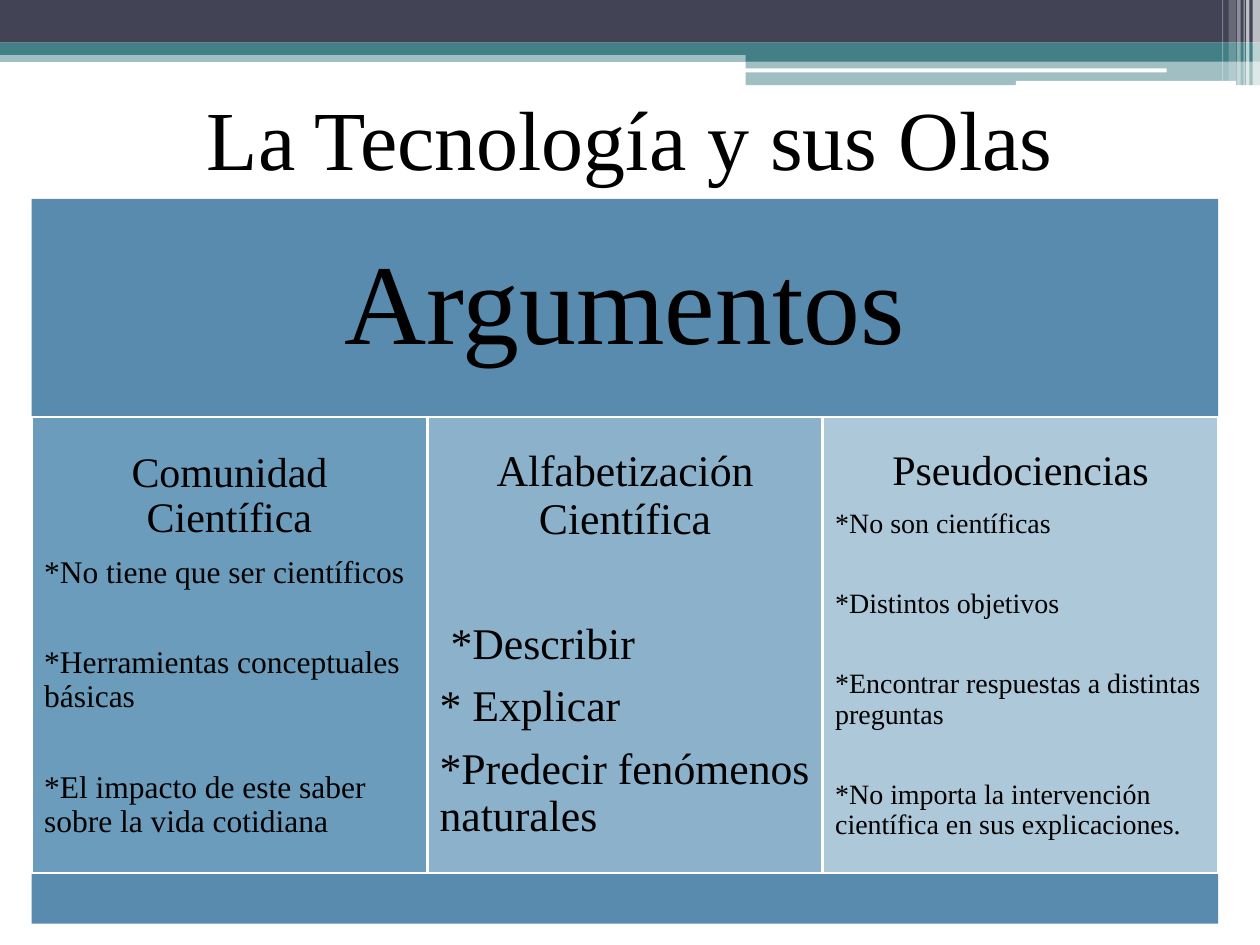
from lxml.etree import SubElement
from pptx import Presentation
from pptx.dml.color import RGBColor
from pptx.enum.shapes import MSO_SHAPE
from pptx.enum.text import MSO_ANCHOR, PP_ALIGN
from pptx.oxml.ns import qn
from pptx.util import Cm, Pt

WHITE = RGBColor(0xFF, 0xFF, 0xFF)
BLACK = RGBColor(0, 0, 0)
NAVY = RGBColor(0x42, 0x44, 0x56)
TEAL = RGBColor(0x43, 0x80, 0x86)
BLUE = RGBColor(0x58, 0x8B, 0xAD)
COLUMN_BLUE = RGBColor(0x5C, 0x92, 0xB5)
FONT = "Times New Roman"


def add_block(left, top, width, height, color, alpha=100, kind=MSO_SHAPE.RECTANGLE):
    block = slide.shapes.add_shape(kind, Cm(left), Cm(top), Cm(width), Cm(height))
    block.shadow.inherit = False
    block.fill.solid()
    block.fill.fore_color.rgb = color
    block.line.fill.background()
    if alpha < 100:
        srgb = block._element.spPr.find(qn("a:solidFill")).find(qn("a:srgbClr"))
        SubElement(srgb, qn("a:alpha")).set("val", str(alpha * 1000))
    return block


def write(paragraph, text, size, align, gap=0.0):
    paragraph.text = text
    values = {"alignment": align, "line_spacing": 0.9,
              "space_before": Pt(0), "space_after": Pt(gap)}
    for name, value in values.items():
        setattr(paragraph, name, value)
    for name, value in {"name": FONT, "size": Pt(size)}.items():
        setattr(paragraph.font, name, value)
    paragraph.font.color.rgb = BLACK


deck = Presentation()
deck.slide_width, deck.slide_height = Cm(25.4), Cm(19.05)
slide = deck.slides.add_slide(deck.slide_layouts[5])

# Header bands: left, top, width, height, colour, opacity
for band in [
    (0, 1.02, 25.4, 0.23, TEAL, 50),
    (0, 0, 25.4, 0.86, NAVY),
    (0, 0.86, 25.4, 0.25, TEAL),
    (15.03, 0.99, 10.37, 0.25, TEAL),
    (15.03, 1.22, 10.37, 0.5, TEAL, 50),
]:
    add_block(*band)

# White rules under the header
for rule in [(15.01, 1.38, 8.51, 0.08), (20.48, 1.63, 4.44, 0.1)]:
    add_block(*rule, WHITE, kind=MSO_SHAPE.ROUNDED_RECTANGLE)

# Vertical stripes in the corner: left, width, height, opacity
for left, width, height, alpha in [
    (25.25, 0.15, 1.73, 65), (25.12, 0.07, 1.73, 65), (25.07, 0.02, 1.73, 60),
    (24.94, 0.07, 1.73, 40), (24.77, 0.15, 1.63, 20), (24.64, 0.02, 1.63, 30),
]:
    add_block(left, 0, width, height, WHITE, alpha)

# Title
title = slide.shapes.title
for name, value in {"left": 1.27, "top": 1.27, "width": 22.86, "height": 2.97}.items():
    setattr(title, name, Cm(value))
title.text_frame.vertical_anchor = MSO_ANCHOR.MIDDLE
write(title.text_frame.paragraphs[0], "La Tecnología y sus Olas", 48, PP_ALIGN.CENTER)
title.text_frame.paragraphs[0].line_spacing = 1.0

# Top and bottom bars
LEFT, WIDTH = 0.64, 23.92
heading = add_block(LEFT, 4.01, WIDTH, 4.39, BLUE)
heading.text_frame.vertical_anchor = MSO_ANCHOR.MIDDLE
write(heading.text_frame.paragraphs[0], "Argumentos", 65, PP_ALIGN.CENTER, 22.75)
add_block(LEFT, 17.6, WIDTH, 1.02, BLUE)

# Columns: opacity, heading, heading size, gap below it, item size, items with gap below
columns = [
    (90, "Comunidad\vCientífica", 24, 8.4, 18, [
        ("*No tiene que ser científicos", 32),
        ("*Herramientas conceptuales básicas", 32),
        ("*El impacto de este saber sobre la vida cotidiana", 6.3)]),
    (70, "Alfabetización Científica", 25, 44.5, 25, [
        (" *Describir", 8.75),
        ("* Explicar", 8.75),
        ("*Predecir fenómenos naturales", 8.75)]),
    (50, "Pseudociencias", 24, 8.4, 16, [
        ("*No son científicas", 28.5),
        ("*Distintos objetivos", 28.5),
        ("*Encontrar respuestas a distintas preguntas", 28.5),
        ("*No importa la intervención científica en sus explicaciones.", 5.6)]),
]
column_width = WIDTH / len(columns)
for index, (alpha, topic, topic_size, topic_gap, item_size, items) in enumerate(columns):
    column = add_block(LEFT + index * column_width, 8.41, column_width, 9.19,
                       COLUMN_BLUE, alpha)
    column.line.color.rgb = WHITE
    column.line.width = Pt(1.5)
    frame = column.text_frame
    frame.vertical_anchor = MSO_ANCHOR.MIDDLE
    for side in ("left", "top", "right", "bottom"):
        setattr(frame, f"margin_{side}", Cm(0.25))
    write(frame.paragraphs[0], topic, topic_size, PP_ALIGN.CENTER, topic_gap)
    for item, gap in items:
        write(frame.add_paragraph(), item, item_size, PP_ALIGN.LEFT, gap)

deck.save("out.pptx")
